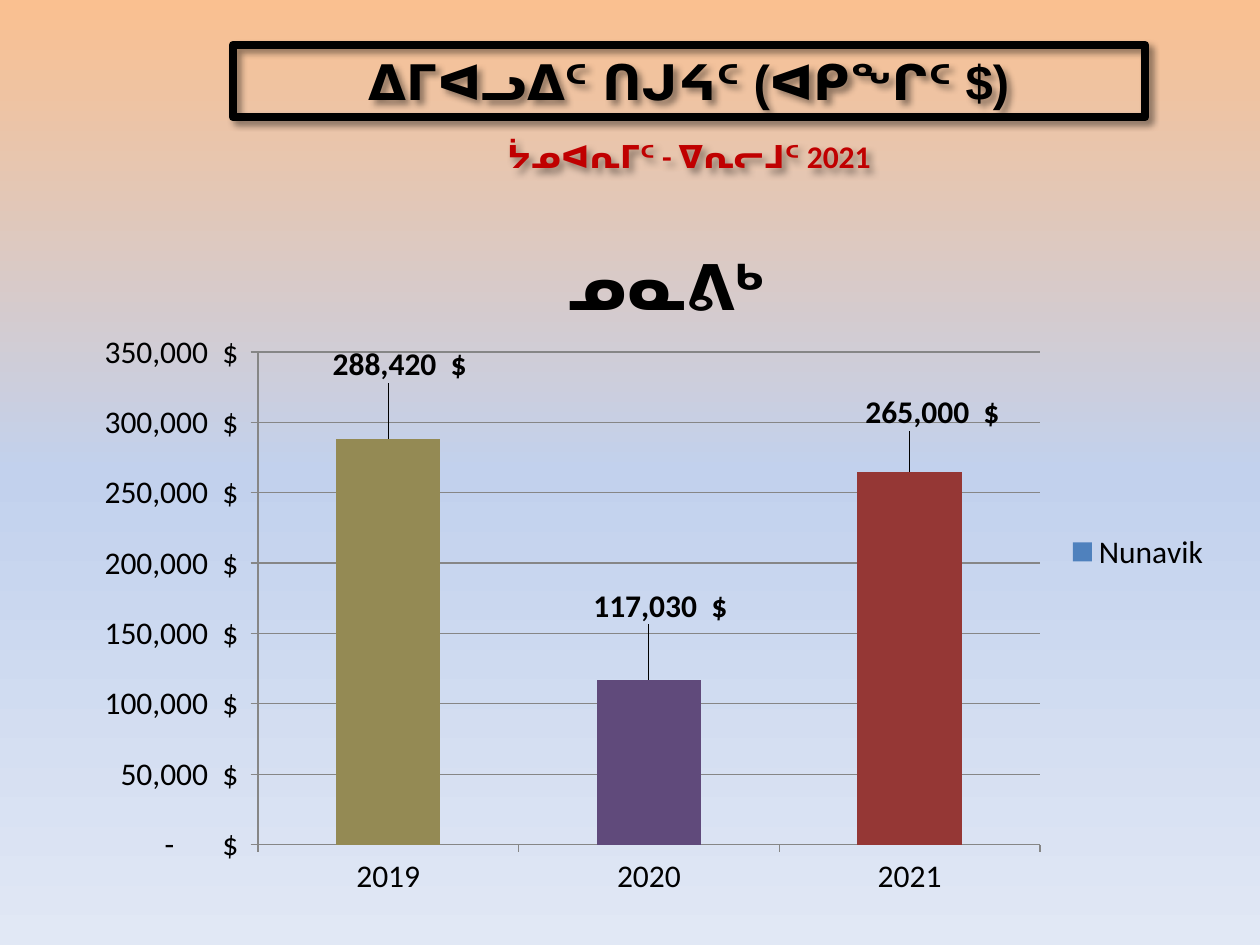
from lxml import etree
from pptx import Presentation
from pptx.chart.data import CategoryChartData
from pptx.dml.color import RGBColor
from pptx.enum.chart import XL_CHART_TYPE, XL_LABEL_POSITION, XL_LEGEND_POSITION, XL_TICK_MARK
from pptx.enum.shapes import MSO_SHAPE
from pptx.enum.text import MSO_ANCHOR, MSO_AUTO_SIZE, PP_ALIGN
from pptx.oxml import parse_xml
from pptx.oxml.ns import nsdecls, qn
from pptx.util import Pt

COLUMN = XL_CHART_TYPE.COLUMN_CLUSTERED
ABOVE = XL_LABEL_POSITION.OUTSIDE_END
RIGHT = XL_LEGEND_POSITION.RIGHT
OUTSIDE = XL_TICK_MARK.OUTSIDE
RECT = MSO_SHAPE.RECTANGLE
MIDDLE = MSO_ANCHOR.MIDDLE
GROW = MSO_AUTO_SIZE.SHAPE_TO_FIT_TEXT
CENTER = PP_ALIGN.CENTER

BLACK = RGBColor(0x00, 0x00, 0x00)
RED = RGBColor(0xC0, 0x00, 0x00)
GRAY = RGBColor(0x86, 0x86, 0x86)
BLUE = RGBColor(0x4F, 0x81, 0xBD)
OLIVE = RGBColor(0x94, 0x8A, 0x54)
PURPLE = RGBColor(0x60, 0x4A, 0x7B)
BRICK = RGBColor(0x95, 0x37, 0x35)
SKY = [(0, "FAC090"), (50, "C2D1ED"), (100, "E1E8F5")]

SCALE = 914400 / 126
MONEY = r'_ * #,##0_)\ "$"_ ;_ * \(#,##0\)\ "$"_ ;_ * "-"??_)\ "$"_ ;_ @_ '

# year, value, bar colour, label shift as fractions of the chart
BARS = [
    ("2019", 288420, OLIVE, (0.01, -0.07)),
    ("2020", 117030, PURPLE, (0.01, -0.07)),
    ("2021", 265000, BRICK, (0.02, -0.05)),
]


def px(n):
    return round(n * SCALE)


def layout(**parts):
    """Manual chart layout; parts are c:manualLayout children in schema order."""
    node = parse_xml(f"<c:layout {nsdecls('c')}><c:manualLayout/></c:layout>")
    for name, val in parts.items():
        etree.SubElement(node[0], qn(f"c:{name}")).set("val", str(val))
    return node


class Deck:
    def __init__(self, wide, high):
        self.font = "Calibri"
        self.size = 18
        self.prs = Presentation()
        self.prs.slide_width, self.prs.slide_height = px(wide), px(high)
        self.slide = self.prs.slides.add_slide(self.prs.slide_layouts[6])

    def backdrop(self, stops):
        fill = self.slide.background.fill
        fill.gradient()
        fill.gradient_angle = 270
        grad = self.slide.background._cSld.find(".//" + qn("a:gradFill"))
        marks = "".join(
            f'<a:gs pos="{pos * 1000}"><a:srgbClr val="{color}"/></a:gs>'
            for pos, color in stops)
        new = parse_xml(f"<a:gsLst {nsdecls('a')}>{marks}</a:gsLst>")
        grad.replace(grad.find(qn("a:gsLst")), new)

    def shade(self, shape):
        """Soft shadow down and to the right."""
        shape._element.spPr.append(parse_xml(
            f'<a:effectLst {nsdecls("a")}>'
            '<a:outerShdw blurRad="50800" dist="38100" dir="2700000" algn="tl" rotWithShape="0">'
            '<a:srgbClr val="000000"><a:alpha val="40000"/></a:srgbClr>'
            '</a:outerShdw></a:effectLst>'))

    def style(self, font, size, color, bold=False, name=None):
        font.name = name or self.font
        font.size, font.bold = Pt(size), bold
        font.color.rgb = color

    def text(self, shape, words, size, color, name=None):
        frame = shape.text_frame
        frame.word_wrap = True
        frame.auto_size = GROW
        frame.vertical_anchor = MIDDLE
        para = frame.paragraphs[0]
        para.alignment = CENTER
        run = para.add_run()
        run.text = words
        self.style(run.font, size, color, True, name)

    def frame(self, box, words, size, name):
        shape = self.slide.shapes.add_shape(RECT, *map(px, box))
        shape.fill.background()
        shape.line.color.rgb = BLACK
        shape.line.width = Pt(5)
        self.shade(shape)
        self.text(shape, words, size, BLACK, name)

    def label(self, box, words, color):
        shape = self.slide.shapes.add_textbox(*map(px, box))
        shape.fill.background()
        self.shade(shape)
        self.text(shape, words, self.size, color)

    def chart(self, box, title, name, bars):
        data = CategoryChartData(number_format=MONEY)
        data.categories = [bar[0] for bar in bars]
        data.add_series(name, [bar[1] for bar in bars])
        chart = self.slide.shapes.add_chart(COLUMN, *map(px, box), data).chart
        self.style(chart.font, self.size, BLACK)
        self.head(chart, title)
        chart.has_legend = True
        chart.legend.position = RIGHT
        chart.legend.include_in_layout = False
        self.axes(chart)
        self.bars(chart.plots[0], bars)
        area = chart._chartSpace.chart.plotArea
        for old in area.findall(qn("c:layout")):
            area.remove(old)
        area.insert(0, layout(layoutTarget="inner", xMode="edge", yMode="edge",
                              x=0.16, y=0.22, w=0.68, h=0.69))

    def head(self, chart, words):
        chart.has_title = True
        title = chart.chart_title
        run = title.text_frame.paragraphs[0].add_run()
        run.text = words
        self.style(run.font, 36, BLACK, True)
        node = title._element
        for old in node.findall(qn("c:layout")):
            node.remove(old)
        node.find(qn("c:tx")).addnext(
            layout(xMode="edge", yMode="edge", x=0.42, y=0.05))

    def axes(self, chart):
        value = chart.value_axis
        for axis in (chart.category_axis, value):
            axis.major_tick_mark = OUTSIDE
            axis.format.line.color.rgb = GRAY
        value.minimum_scale, value.maximum_scale = 0, 350000
        value.major_unit = 50000
        value.has_major_gridlines = True
        value.major_gridlines.format.line.color.rgb = GRAY
        value.tick_labels.number_format = MONEY
        value.tick_labels.number_format_is_linked = False

    def bars(self, plot, bars):
        plot.gap_width = 150
        plot.vary_by_categories = False
        series = plot.series[0]
        series.format.fill.solid()
        series.format.fill.fore_color.rgb = BLUE
        labels = series.data_labels
        labels.show_value = True
        labels.number_format = MONEY
        labels.number_format_is_linked = False
        self.style(labels.font, self.size, BLACK, True)
        for i, (_, _, color, _) in enumerate(bars):
            point = series.points[i]
            point.format.fill.solid()
            point.format.fill.fore_color.rgb = color
            point.data_label.position = ABOVE
            self.style(point.data_label.font, self.size, BLACK, True)
        nodes = series._element.findall(".//" + qn("c:dLbl"))
        for node, (_, _, _, (x, y)) in zip(nodes, bars):
            node.find(qn("c:idx")).addnext(layout(x=x, y=y))


def main():
    deck = Deck(1260, 945)
    deck.backdrop(SKY)
    deck.chart((74, 195, 1150, 714), "ᓄᓇᕕᒃ", "Nunavik", BARS)
    deck.frame((233, 45, 912, 72), "ᐃᒥᐊᓗᐃᑦ ᑎᒍᔦᑦ (ᐊᑭᖏᑦ $)", 28, "Arial")
    deck.label((233, 131, 912, 50), "ᔮᓄᐊᕆᒥᑦ - ᐁᕆᓕᒧᑦ 2021", RED)
    deck.prs.save("out.pptx")


if __name__ == "__main__":
    main()
